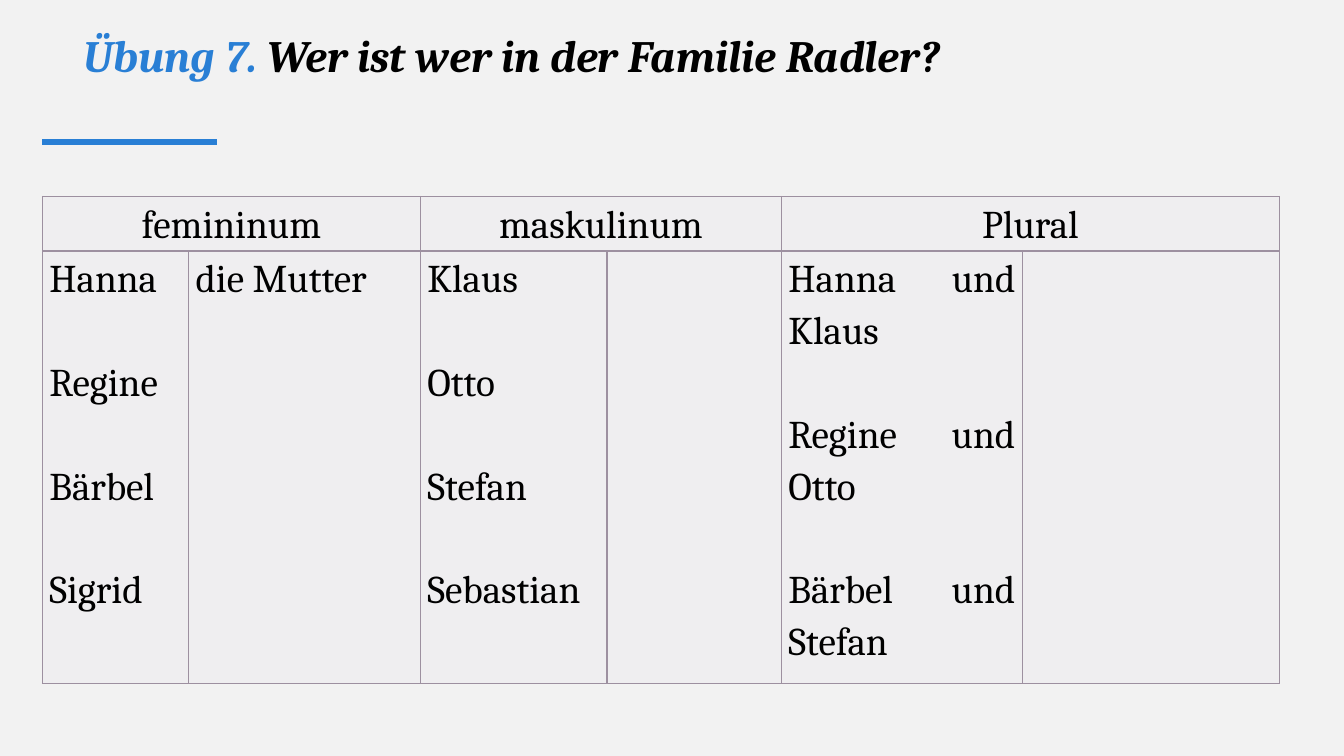
from lxml import etree
from pptx import Presentation
from pptx.dml.color import RGBColor
from pptx.enum.shapes import MSO_CONNECTOR
from pptx.enum.text import MSO_AUTO_SIZE, PP_ALIGN
from pptx.oxml import parse_xml
from pptx.oxml.ns import qn
from pptx.util import Inches, Pt

FONT = "Cambria"
BLUE, BLACK, BACKGROUND = "297FD5", "000000", "F2F2F2"
CELL_FILL, BORDER = "EFEEF0", "9D90A0"
TITLE = [("Übung 7. ", BLUE), ("Wer ist wer in der Familie Radler?", BLACK)]
GROUPS = [
    ("femininum", ["Hanna", "Regine", "Bärbel", "Sigrid"], ["die Mutter"]),
    ("maskulinum", ["Klaus", "Otto", "Stefan", "Sebastian"], []),
    ("Plural", ["Hanna und Klaus", "Regine und Otto", "Bärbel und Stefan"], []),
]
COLUMN_WIDTHS = [1.45, 2.3, 1.85, 1.73, 2.39, 2.55]
ROW_HEIGHTS = [0.54, 4.29]
LEFT, TABLE_TOP = 0.42, 1.95
RULE_Y, RULE_LENGTH = 1.41, 1.73
NAME_GAP = 37


def color(value):
    return RGBColor.from_string(value)


def set_borders(cell):
    properties = cell._tc.get_or_add_tcPr()
    for index, side in enumerate(("lnL", "lnR", "lnT", "lnB")):
        properties.insert(index, parse_xml(
            f'<a:{side} xmlns:a="http://schemas.openxmlformats.org/drawingml/2006/main" '
            f'w="{Pt(1)}"><a:solidFill><a:srgbClr val="{BORDER}"/></a:solidFill></a:{side}>'))


def write_cell(cell, lines, alignment):
    frame = cell.text_frame
    for index, line in enumerate(lines):
        paragraph = frame.add_paragraph() if index else frame.paragraphs[0]
        paragraph.text = line
        paragraph.alignment = alignment
        paragraph.line_spacing = 1.15
        paragraph.space_before = Pt(NAME_GAP if index else 0)
        paragraph.font.name = FONT
        paragraph.font.size = Pt(28)
        paragraph.font.bold = False
        paragraph.font.color.rgb = color(BLACK)


presentation = Presentation()
presentation.slide_width, presentation.slide_height = Inches(13.33), Inches(7.5)
slide = presentation.slides.add_slide(presentation.slide_layouts[6])
slide.background.fill.solid()
slide.background.fill.fore_color.rgb = color(BACKGROUND)

title = slide.shapes.add_textbox(Inches(0.73), Inches(0.23), Inches(11.33), Inches(0.64))
title.text_frame.word_wrap = True
title.text_frame.auto_size = MSO_AUTO_SIZE.SHAPE_TO_FIT_TEXT
paragraph = title.text_frame.paragraphs[0]
paragraph.font.name = FONT
paragraph.font.size = Pt(32)
paragraph.font.bold = paragraph.font.italic = True
for text, run_color in TITLE:
    run = paragraph.add_run()
    run.text = text
    run.font.color.rgb = color(run_color)

rule = slide.shapes.add_connector(
    MSO_CONNECTOR.STRAIGHT, Inches(LEFT), Inches(RULE_Y),
    Inches(LEFT + RULE_LENGTH), Inches(RULE_Y))
rule.line.color.rgb = color(BLUE)
rule.line.width = Pt(4)
etree.SubElement(rule._element.spPr, qn("a:effectLst"))

table = slide.shapes.add_table(
    len(ROW_HEIGHTS), len(COLUMN_WIDTHS), Inches(LEFT), Inches(TABLE_TOP),
    Inches(sum(COLUMN_WIDTHS)), Inches(sum(ROW_HEIGHTS))).table
table.first_row = table.horz_banding = False
for column, width in zip(table.columns, COLUMN_WIDTHS):
    column.width = Inches(width)
for row, height in zip(table.rows, ROW_HEIGHTS):
    row.height = Inches(height)
for cell in table.iter_cells():
    cell.margin_left = cell.margin_right = Inches(0.07)
    cell.margin_top = cell.margin_bottom = 0
    cell.fill.solid()
    cell.fill.fore_color.rgb = color(CELL_FILL)
    set_borders(cell)

for index, (heading, names, answers) in enumerate(GROUPS):
    column = 2 * index
    table.cell(0, column).merge(table.cell(0, column + 1))
    write_cell(table.cell(0, column), [heading], PP_ALIGN.CENTER)
    write_cell(table.cell(1, column), names, PP_ALIGN.JUSTIFY)
    write_cell(table.cell(1, column + 1), answers, PP_ALIGN.JUSTIFY)

presentation.save("out.pptx")
